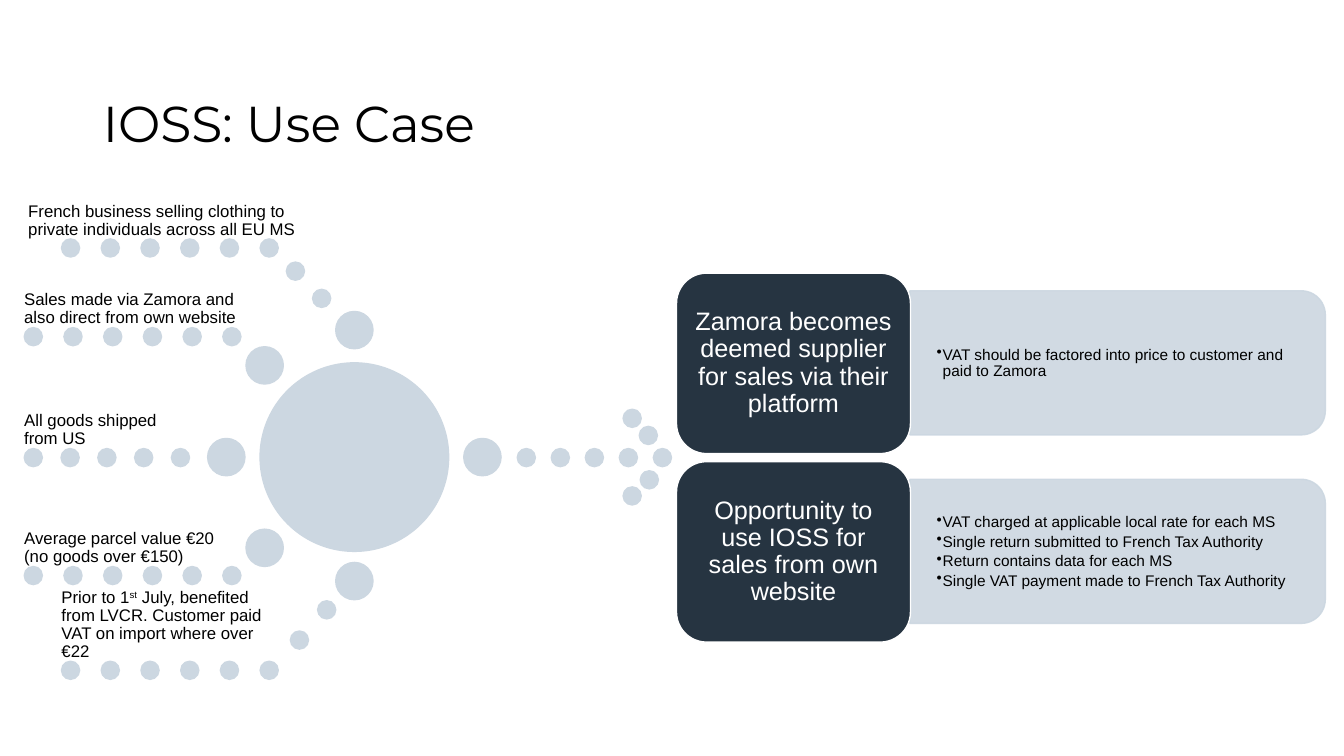
from dataclasses import dataclass

from lxml.etree import SubElement
from pptx import Presentation
from pptx.dml.color import RGBColor as Rgb
from pptx.enum.shapes import MSO_SHAPE as Kind
from pptx.enum.text import MSO_ANCHOR as Anchor, PP_ALIGN as Align
from pptx.oxml.ns import qn
from pptx.util import Inches, Pt

HUES = {"pale": "CCD7E1", "dark": "263441", "white": "FFFFFF", "black": "000000"}
DOT, BALL, HUB = 0.18, 0.37, 1.87
MID = 4.45
STEP = 1.87

Point = tuple[float, float]


@dataclass
class Branch:
    text: str
    left: float
    width: float
    first: float
    last: float
    count: int
    top: float
    ball: Point
    bend: tuple[Point, ...] = ()


@dataclass
class Result:
    head: str
    notes: tuple[str, ...]


BRANCHES = (
    Branch("French business selling clothing to private individuals across all EU MS",
           0.28, 2.81, 0.61, 2.58, 6, 2.37, (3.33, 3.09), ((2.84, 2.6), (3.1, 2.87))),
    Branch("Sales made via Zamora and also direct from own website",
           0.24, 2.16, 0.24, 2.21, 6, 3.25, (2.44, 3.44)),
    Branch("All goods shipped from US",
           0.24, 1.64, 0.24, 1.7, 5, MID, (2.06, 4.35)),
    Branch("Average parcel value €20 (no goods over €150)",
           0.24, 2.16, 0.24, 2.21, 6, 5.62, (2.44, 5.25)),
    Branch("Prior to 1^st^ July, benefited from LVCR. Customer paid VAT on import where over €22",
           0.61, 2.16, 0.61, 2.58, 6, 6.56, (3.33, 5.58), ((2.88, 6.26), (3.15, 5.96))),
)
TIP = ((6.18, 4.06), (6.34, 4.23), (6.35, 4.67), (6.18, 4.83))
RESULTS = (
    Result("Zamora becomes deemed supplier for sales via their platform",
           ("VAT should be factored into price to customer and paid to Zamora",)),
    Result("Opportunity to use IOSS for sales from own website",
           ("VAT charged at applicable local rate for each MS",
            "Single return submitted to French Tax Authority",
            "Return contains data for each MS",
            "Single VAT payment made to French Tax Authority")),
)


def write(frame, *lines: str, size: float, font: str = "Arial", hue: str = "black",
          align=Align.LEFT, anchor=Anchor.BOTTOM, pad: Point = (0, 0),
          bullet: bool = False) -> None:
    frame.word_wrap = True
    frame.vertical_anchor = anchor
    frame.margin_left = frame.margin_right = Inches(pad[0])
    frame.margin_top = frame.margin_bottom = Inches(pad[1])
    for i, line in enumerate(lines):
        para = frame.add_paragraph() if i else frame.paragraphs[0]
        para.alignment = align
        para.line_spacing = 0.9
        para.space_before = Pt(0)
        if bullet:
            para.level = 1
            para.space_after = Pt(2)
            props = para._p.get_or_add_pPr()
            props.set("marL", str(Inches(0.06)))
            props.set("indent", str(Inches(-0.06)))
            SubElement(props, qn("a:buChar"), char="•")
        for j, part in enumerate(line.split("^")):
            run = para.add_run()
            run.text = part
            run.font.size = Pt(size)
            run.font.name = font
            run.font.color.rgb = Rgb.from_string(HUES[hue])
            if j % 2:
                run._r.get_or_add_rPr().set("baseline", "30000")


def draw(slide, kind, left: float, top: float, width: float, height: float,
         fill: str = "pale", line: str = "pale"):
    shape = slide.shapes.add_shape(kind, *map(Inches, (left, top, width, height)))
    shape.shadow.inherit = False
    shape.fill.solid()
    shape.fill.fore_color.rgb = Rgb.from_string(HUES[fill])
    shape.line.color.rgb = Rgb.from_string(HUES[line])
    shape.line.width = Pt(1)
    return shape


def label(slide, left: float, top: float, width: float, height: float):
    return slide.shapes.add_textbox(*map(Inches, (left, top, width, height))).text_frame


def disc(slide, spot: Point, size: float = DOT) -> None:
    draw(slide, Kind.OVAL, *spot, size, size)


def trail(slide, first: float, last: float, count: int, top: float) -> None:
    gap = (last - first) / (count - 1)
    for i in range(count):
        disc(slide, (first + i * gap, top))


def branch(slide, item: Branch) -> None:
    disc(slide, item.ball, BALL)
    for spot in item.bend:
        disc(slide, spot)
    trail(slide, item.first, item.last, item.count, item.top)
    write(label(slide, item.left, item.top - 0.47, item.width, 0.47), item.text, size=12)


def result(slide, item: Result, drop: float) -> None:
    bar = draw(slide, Kind.ROUND_2_SAME_RECTANGLE, 10.37, 1.54 + drop, 1.43, 4.12)
    bar.rotation = 90
    for tint in bar._element.spPr.iter(qn("a:srgbClr")):
        SubElement(tint, qn("a:alpha"), val="90000")
    write(label(slide, 9.02, 2.96 + drop, 4.05, 1.29), *item.notes, size=11,
          anchor=Anchor.MIDDLE, pad=(0.27, 0.14), bullet=True)
    tile = draw(slide, Kind.ROUNDED_RECTANGLE, 6.71, 2.71 + drop, 2.32, 1.79,
                fill="dark", line="white")
    write(tile.text_frame, item.head, size=18, hue="white", align=Align.CENTER,
          anchor=Anchor.MIDDLE, pad=(0.07, 0.04))


def main() -> None:
    deck = Presentation()
    deck.slide_width, deck.slide_height = Inches(13.33), Inches(7.5)
    slide = deck.slides.add_slide(deck.slide_layouts[5])
    title = slide.shapes.title
    title.left, title.top = Inches(0.92), Inches(0.91)
    title.width, title.height = Inches(11.58), Inches(0.66)
    write(title.text_frame, "IOSS: Use Case", size=36, font="Montserrat", pad=(0.1, 0.05))

    trail(slide, 5.13, 6.48, 5, MID)
    disc(slide, (4.6, 4.35), BALL)
    for spot in TIP:
        disc(slide, spot)
    disc(slide, (2.58, 3.6), HUB)
    for item in BRANCHES:
        branch(slide, item)
    for i, item in enumerate(RESULTS):
        result(slide, item, i * STEP)
    deck.save("out.pptx")


if __name__ == "__main__":
    main()
